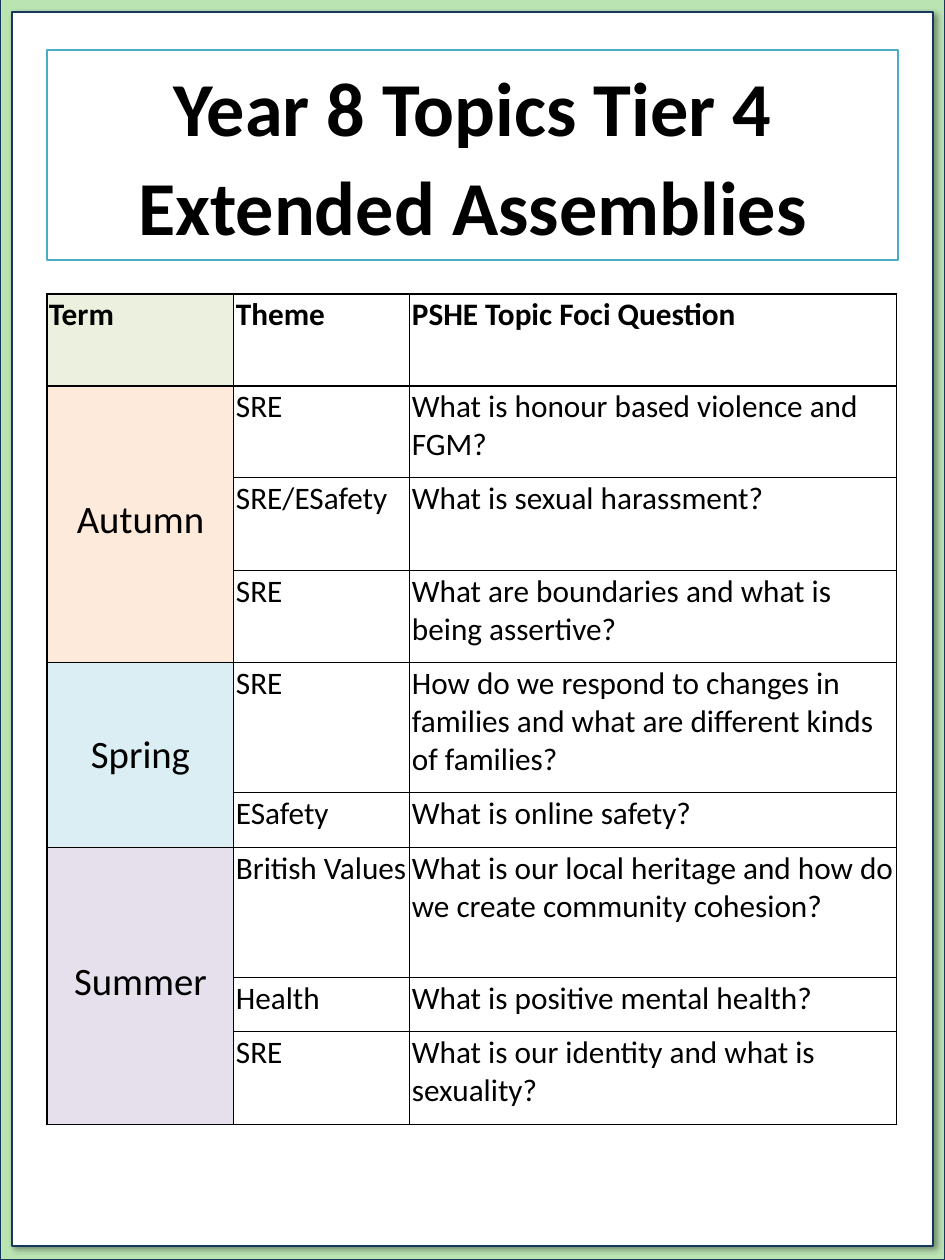
from dataclasses import dataclass
from itertools import accumulate

from lxml.etree import SubElement
from pptx import Presentation
from pptx.dml.color import RGBColor
from pptx.enum.shapes import MSO_SHAPE
from pptx.enum.text import MSO_ANCHOR as Anchor, PP_ALIGN as Align
from pptx.oxml.ns import qn
from pptx.util import Emu, Pt

PX = 10160  # EMU per px, 90 px to the inch
COLORS = {
    "black": "000000", "white": "FFFFFF", "navy": "17375E", "mint": "BBE4B3",
    "aqua": "4BACC6", "term": "EBF1DE", "autumn": "FDEADA",
    "spring": "DBEEF4", "summer": "E6E0EC",
}


@dataclass(frozen=True)
class Panel:
    left: int
    top: int
    width: int
    height: int
    fill: str
    line: str
    weight: float


@dataclass(frozen=True)
class Topic:
    theme: str
    question: str
    height: int


@dataclass(frozen=True)
class Term:
    name: str
    fill: str
    topics: tuple[Topic, ...]


BACKDROP = Panel(0, -1, 945, 1261, "mint", "navy", 2.25)
PAGE = Panel(12, 12, 921, 1234, "white", "navy", 2.25)
BANNER = Panel(47, 50, 851, 210, "white", "aqua", 2)

TITLE = ("Year 8 Topics Tier 4", "Extended Assemblies")
HEADINGS = ("Term", "Theme", "PSHE Topic Foci Question")
HEADING_HEIGHT = 92
COLUMNS = (187, 176, 487)
TABLE_LEFT, TABLE_TOP = 47, 294
TERMS = (
    Term("Autumn", "autumn", (
        Topic("SRE", "What is honour based violence and FGM?", 92),
        Topic("SRE/ESafety", "What is sexual harassment?", 93),
        Topic("SRE", "What are boundaries and what is being assertive?", 92),
    )),
    Term("Spring", "spring", (
        Topic("SRE", "How do we respond to changes in families and what are "
                     "different kinds of families?", 130),
        Topic("ESafety", "What is online safety?", 55),
    )),
    Term("Summer", "summer", (
        Topic("British Values", "What is our local heritage and how do we "
                                "create community cohesion?", 130),
        Topic("Health", "What is positive mental health?", 54),
        Topic("SRE", "What is our identity and what is sexuality?", 93),
    )),
)

# Formats
HEADING = {"size": Pt(25), "bold": True}
BODY = {"size": Pt(25), "bold": False}
TERM_NAME = {"size": Pt(31), "bold": False}
BANNER_TEXT = {"size": Pt(61), "bold": True}
CELL_MARGINS = {"margin_left": 2, "margin_right": 2, "margin_top": 2, "margin_bottom": 11}
NO_MARGINS = dict.fromkeys(CELL_MARGINS, 0)


def px(length: int) -> Emu:
    return Emu(length * PX)


def rgb(name: str) -> RGBColor:
    return RGBColor.from_string(COLORS[name])


def write(paragraph, text: str, font_format: dict, align=Align.LEFT) -> None:
    paragraph.alignment = align
    run = paragraph.add_run()
    run.text = text
    for key, value in {"name": "Calibri", **font_format}.items():
        setattr(run.font, key, value)
    run.font.color.rgb = rgb("black")


def draw_panel(slide, panel: Panel):
    shape = slide.shapes.add_shape(
        MSO_SHAPE.RECTANGLE, px(panel.left), px(panel.top), px(panel.width), px(panel.height))
    shape.shadow.inherit = False
    shape.fill.solid()
    shape.fill.fore_color.rgb = rgb(panel.fill)
    shape.line.color.rgb = rgb(panel.line)
    shape.line.width = Pt(panel.weight)
    return shape


def add_shadow(shape) -> None:
    effects = shape.element.spPr.find(qn("a:effectLst"))
    shadow = SubElement(effects, qn("a:outerShdw"), blurRad=str(Pt(4)), dist=str(Pt(3)),
                        dir="2700000", algn="tl", rotWithShape="0")
    color = SubElement(shadow, qn("a:srgbClr"), val=COLORS["black"])
    SubElement(color, qn("a:alpha"), val="40000")


def draw_borders(cell) -> None:
    properties = cell._tc.get_or_add_tcPr()
    for position, side in enumerate(("a:lnL", "a:lnR", "a:lnT", "a:lnB")):
        border = SubElement(properties, qn(side), w=str(Pt(1)))
        fill = SubElement(border, qn("a:solidFill"))
        SubElement(fill, qn("a:srgbClr"), val=COLORS["black"])
        properties.insert(position, border)


def fill_cell(cell, text: str, font_format: dict, fill: str = "white",
              align=Align.LEFT, anchor=Anchor.TOP, margins: dict = CELL_MARGINS) -> None:
    cell.fill.solid()
    cell.fill.fore_color.rgb = rgb(fill)
    cell.vertical_anchor = anchor
    for key, value in margins.items():
        setattr(cell, key, px(value))
    write(cell.text_frame.paragraphs[0], text, font_format, align)


def draw_banner(slide) -> None:
    frame = draw_panel(slide, BANNER).text_frame
    frame.word_wrap = True
    frame.vertical_anchor = Anchor.MIDDLE
    for index, line in enumerate(TITLE):
        paragraph = frame.add_paragraph() if index else frame.paragraphs[0]
        paragraph.space_after = Pt(6)
        write(paragraph, line, BANNER_TEXT, Align.CENTER)


def draw_topics(slide) -> None:
    heights = [HEADING_HEIGHT, *(topic.height for term in TERMS for topic in term.topics)]
    table = slide.shapes.add_table(
        len(heights), len(COLUMNS), px(TABLE_LEFT), px(TABLE_TOP),
        px(sum(COLUMNS)), px(sum(heights))).table
    table.first_row = table.horz_banding = False
    for column, width in zip(table.columns, COLUMNS):
        column.width = px(width)
    for row, height in zip(table.rows, heights):
        row.height = px(height)

    # Heading row
    for column, heading in enumerate(HEADINGS):
        fill_cell(table.cell(0, column), heading, HEADING, "white" if column else "term")

    # One merged cell per term, one row per topic
    first_rows = accumulate((len(term.topics) for term in TERMS), initial=1)
    for first, term in zip(first_rows, TERMS):
        name_cell = table.cell(first, 0)
        name_cell.merge(table.cell(first + len(term.topics) - 1, 0))
        fill_cell(name_cell, term.name, TERM_NAME, term.fill, Align.CENTER, Anchor.MIDDLE,
                  NO_MARGINS if term.name == "Spring" else CELL_MARGINS)
        for row, topic in enumerate(term.topics, first):
            fill_cell(table.cell(row, 1), topic.theme, BODY)
            fill_cell(table.cell(row, 2), topic.question, BODY)

    for cell in table.iter_cells():
        draw_borders(cell)


def main() -> None:
    deck = Presentation()
    deck.slide_width, deck.slide_height = px(945), px(1260)
    slide = deck.slides.add_slide(deck.slide_layouts[6])

    # Framed page
    draw_panel(slide, BACKDROP)
    add_shadow(draw_panel(slide, PAGE))

    # Content
    draw_banner(slide)
    draw_topics(slide)
    deck.save("out.pptx")


if __name__ == "__main__":
    main()
